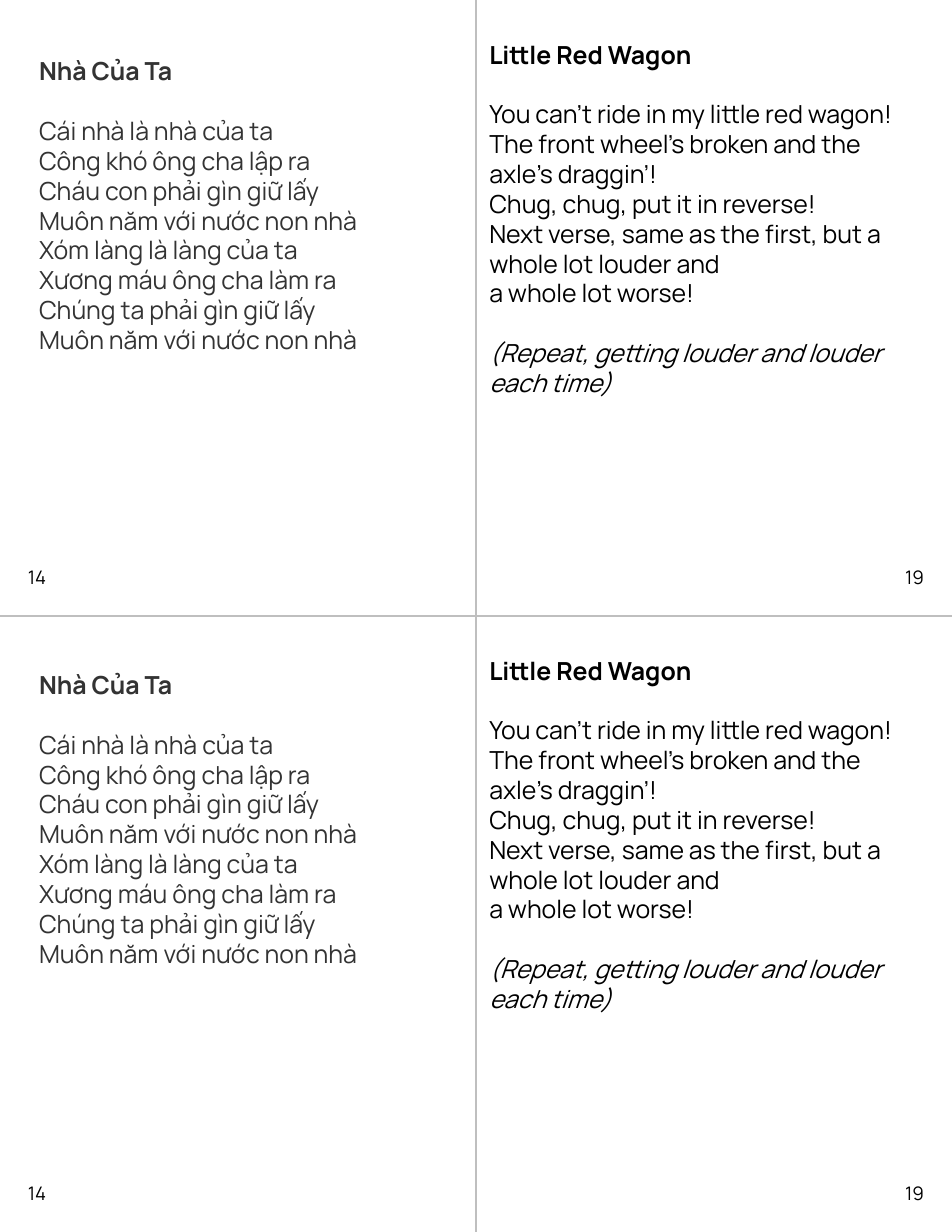
from dataclasses import dataclass

from lxml import etree
from pptx import Presentation
from pptx.dml.color import RGBColor
from pptx.enum import shapes, text
from pptx.oxml import ns
from pptx.util import Inches, Pt


@dataclass(frozen=True)
class Theme:
    font: str = "Manrope"
    black: str = "000000"
    gray: str = "333333"
    rule: str = "BFBFBF"
    song_size: float = 16
    number_size: float = 12
    stanza_gap: float = 19.2
    rule_width: float = 0.75


@dataclass(frozen=True)
class Song:
    title: str
    stanzas: tuple
    color: str
    number: str


@dataclass(frozen=True)
class Box:
    column: float
    row: float
    columns: float
    rows: float

    def inset(self, column, row, columns, rows):
        return Box(self.column + column, self.row + row, columns, rows)

    def lengths(self):
        return [Inches(cells * CELL) for cells in
                (self.column, self.row, self.columns, self.rows)]


THEME = Theme()
CELL = 0.25
PANEL_COLUMNS, PANEL_ROWS = 17, 22

HOUSE = Song(
    "Nhà Của Ta",
    (("Cái nhà là nhà của ta\nCông khó ông cha lập ra\n"
      "Cháu con phải gìn giữ lấy\nMuôn năm với nước non nhà\n"
      "Xóm làng là làng của ta\nXương máu ông cha làm ra\n"
      "Chúng ta phải gìn giữ lấy\nMuôn năm với nước non nhà",),),
    THEME.gray, "14")

WAGON = Song(
    "Little Red Wagon",
    (("You can’t ride in my little red wagon!",
      "The front wheel’s broken and the axle’s draggin’!",
      "Chug, chug, put it in reverse!",
      "Next verse, same as the first, but a whole lot louder and",
      "a whole lot worse!"),
     ("(Repeat, getting louder and louder each time)",)),
    THEME.black, "19")


def add_text_frame(page, box, margin):
    frame = page.shapes.add_textbox(*box.lengths()).text_frame
    frame.word_wrap = True
    frame.margin_left = frame.margin_right = Inches(margin)
    frame.margin_top = frame.margin_bottom = Inches(margin)
    return frame


def write_para(para, words, size, color, bold=False, italic=False):
    para.text = words
    para.font.name = THEME.font
    para.font.size = Pt(size)
    para.font.bold = bold
    para.font.italic = italic
    para.font.color.rgb = RGBColor.from_string(color)


def add_song(page, box, song):
    frame = add_text_frame(page, box, 0.1)
    write_para(frame.paragraphs[0], song.title, THEME.song_size, song.color, bold=True)
    for stanza in song.stanzas:
        for index, line in enumerate(stanza):
            para = frame.add_paragraph()
            write_para(para, line, THEME.song_size, song.color,
                       italic=line.startswith("("))
            if index == 0:
                para.space_before = Pt(THEME.stanza_gap)


def add_page_number(page, box, number, alignment):
    frame = add_text_frame(page, box, 0)
    frame.vertical_anchor = text.MSO_ANCHOR.BOTTOM
    para = frame.paragraphs[0]
    write_para(para, number, THEME.number_size, THEME.black)
    para.alignment = alignment


def add_left_panel(page, panel, song_row):
    add_song(page, panel.inset(1, song_row, 16.04, 19.04), HOUSE)
    add_page_number(page, panel.inset(1, 19.96, 2, 1.04), HOUSE.number,
                    text.PP_ALIGN.LEFT)


def add_right_panel(page, panel):
    add_song(page, panel.inset(0.08, 1, 16.04, 17.96), WAGON)
    add_page_number(page, panel.inset(14, 19.96, 2, 1.04), WAGON.number,
                    text.PP_ALIGN.RIGHT)


def add_cut_lines(page, sheet):
    left, top, width, height = sheet.lengths()
    middle, center = top + height // 2, left + width // 2
    for ends in ((center, top, center, top + height),
                 (left, middle, left + width, middle)):
        line = page.shapes.add_connector(shapes.MSO_CONNECTOR.STRAIGHT, *ends)
        line.line.color.rgb = RGBColor.from_string(THEME.rule)
        line.line.width = Pt(THEME.rule_width)
        etree.SubElement(line._element.spPr, ns.qn("a:effectLst"))


def main():
    deck = Presentation()
    sheet = Box(0, 0, 2 * PANEL_COLUMNS, 2 * PANEL_ROWS)
    deck.slide_width, deck.slide_height = sheet.lengths()[2:]
    page = deck.slides.add_slide(deck.slide_layouts[6])

    add_cut_lines(page, sheet)
    for index, song_row in enumerate((1.6, 1.52)):
        left = sheet.inset(0, index * PANEL_ROWS, PANEL_COLUMNS, PANEL_ROWS)
        add_left_panel(page, left, song_row)
        add_right_panel(page, left.inset(PANEL_COLUMNS, 0, PANEL_COLUMNS, PANEL_ROWS))

    deck.save("out.pptx")


if __name__ == "__main__":
    main()
